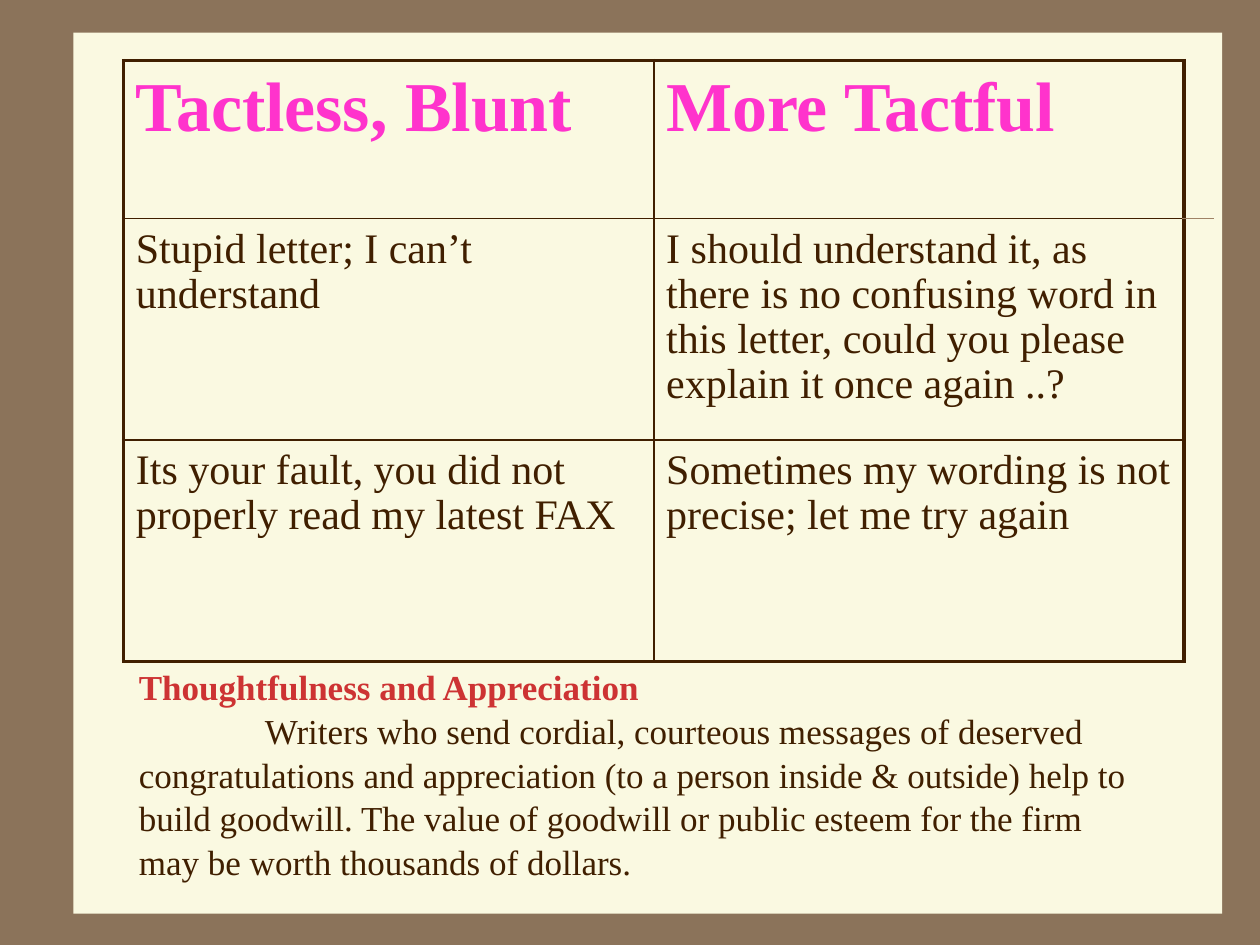
from dataclasses import dataclass
from typing import Optional

from lxml.etree import SubElement
from pptx import Presentation
from pptx.dml.color import RGBColor
from pptx.enum.shapes import MSO_SHAPE
from pptx.oxml.ns import qn
from pptx.util import Cm, Pt


@dataclass(frozen=True)
class Theme:
    frame: str = "8B735A"
    paper: str = "FAF9E1"
    ink: str = "401F00"
    faint: str = "9F8366"
    header: str = "FF33CC"
    heading: str = "CD3333"
    font: str = "Times New Roman"
    header_size: int = 40
    cell_size: int = 24
    body_size: int = 20


@dataclass(frozen=True)
class Panel:
    left: float
    top: float
    width: float
    height: float
    color: str


@dataclass(frozen=True)
class Line:
    color: str
    width: float


THEME = Theme()
THICK = Line(THEME.ink, 2.25)
THIN = Line(THEME.ink, 1)
FAINT = Line(THEME.faint, 1)

PANELS = [
    Panel(0, 0, 25.4, 19.05, THEME.frame),
    Panel(1.48, 0.66, 23.16, 17.76, THEME.paper),
]
ROWS = [
    ("Tactless, Blunt", "More Tactful"),
    ("Stupid letter; I can’t understand",
     "I should understand it, as there is no confusing word in this letter, "
     "could you please explain it once again ..?"),
    ("Its your fault, you did not properly read my latest FAX",
     "Sometimes my wording is not precise; let me try again"),
]
COLUMN_WIDTHS = [10.69, 10.69, 0.43]
ROW_HEIGHTS = [3.18, 4.47, 4.47]
HEADING = "Thoughtfulness and Appreciation"
BODY = ("Writers who send cordial, courteous messages of deserved congratulations "
        "and appreciation (to a person inside & outside) help to build goodwill. "
        "The value of goodwill or public esteem for the firm may be worth "
        "thousands of dollars.")


def add_panel(page, panel: Panel) -> None:
    shape = page.shapes.add_shape(MSO_SHAPE.RECTANGLE, Cm(panel.left), Cm(panel.top),
                                  Cm(panel.width), Cm(panel.height))
    shape.shadow.inherit = False
    shape.fill.solid()
    shape.fill.fore_color.rgb = RGBColor.from_string(panel.color)
    shape.line.fill.background()


def style(para, size: int, color: str, bold: bool = False) -> None:
    para.font.name = THEME.font
    para.font.size = Pt(size)
    para.font.bold = bold
    para.font.color.rgb = RGBColor.from_string(color)


def set_border(cell, side: str, line: Optional[Line]) -> None:
    properties = cell._tc.get_or_add_tcPr()
    edge = SubElement(properties, qn(f"a:ln{side}"))
    if line is None:
        edge.set("w", "0")
        SubElement(edge, qn("a:noFill"))
        return
    edge.set("w", str(Pt(line.width)))
    fill = SubElement(edge, qn("a:solidFill"))
    SubElement(fill, qn("a:srgbClr")).set("val", line.color)


def cell_borders(row: int, column: int) -> dict[str, Optional[Line]]:
    last_row = len(ROWS) - 1
    if column == 2:  # narrow strip beside the framed grid
        return {"L": THICK, "R": None, "T": FAINT if row == 1 else None,
                "B": FAINT if row == 0 else None}
    return {"L": THICK if column == 0 else THIN,
            "R": THICK if column == 1 else THIN,
            "T": THICK if row == 0 else THIN,
            "B": THICK if row == last_row else THIN}


def fill_cell(cell, text: str, is_header: bool) -> None:
    cell.margin_left, cell.margin_right = Cm(0.25), Cm(0.2)
    cell.margin_top, cell.margin_bottom = Cm(0.18), 0
    cell.text = text
    para = cell.text_frame.paragraphs[0]
    if is_header:
        style(para, THEME.header_size, THEME.header, bold=True)
    else:
        para.line_spacing = 0.97
        style(para, THEME.cell_size, THEME.ink)


def add_comparison(page) -> None:
    frame = page.shapes.add_table(len(ROWS), len(COLUMN_WIDTHS), Cm(2.49), Cm(1.22),
                                  Cm(sum(COLUMN_WIDTHS)), Cm(sum(ROW_HEIGHTS)))
    table = frame.table
    table.first_row = table.horz_banding = False
    for column, width in zip(table.columns, COLUMN_WIDTHS):
        column.width = Cm(width)
    for row, height in zip(table.rows, ROW_HEIGHTS):
        row.height = Cm(height)
    table.cell(1, 2).merge(table.cell(2, 2))
    for row, texts in enumerate(ROWS):
        for column in range(len(COLUMN_WIDTHS)):
            cell = table.cell(row, column)
            for side, line in cell_borders(row, column).items():
                set_border(cell, side, line)
            cell.fill.solid()
            cell.fill.fore_color.rgb = RGBColor.from_string(THEME.paper)
            if column < len(texts):
                fill_cell(cell, texts[column], is_header=row == 0)


def add_note(page) -> None:
    box = page.shapes.add_textbox(Cm(2.77), Cm(13.36), Cm(20.42), Cm(4.32))
    frame = box.text_frame
    frame.word_wrap = True
    frame.margin_left, frame.margin_right = Cm(0.03), Cm(0.25)
    frame.margin_top, frame.margin_bottom = Cm(0.03), 0
    heading = frame.paragraphs[0]
    heading.text = HEADING
    style(heading, THEME.body_size, THEME.heading, bold=True)
    body = frame.add_paragraph()
    body.text = BODY
    body._p.get_or_add_pPr().set("indent", str(Cm(2.54)))
    style(body, THEME.body_size, THEME.ink)
    for para in frame.paragraphs:
        para.line_spacing = 1.04


def main() -> None:
    deck = Presentation()
    deck.slide_width, deck.slide_height = Cm(25.4), Cm(19.05)
    page = deck.slides.add_slide(deck.slide_layouts[6])

    # Frame and paper
    for panel in PANELS:
        add_panel(page, panel)

    # Comparison table and the note under it
    add_comparison(page)
    add_note(page)
    deck.save("out.pptx")


if __name__ == "__main__":
    main()
